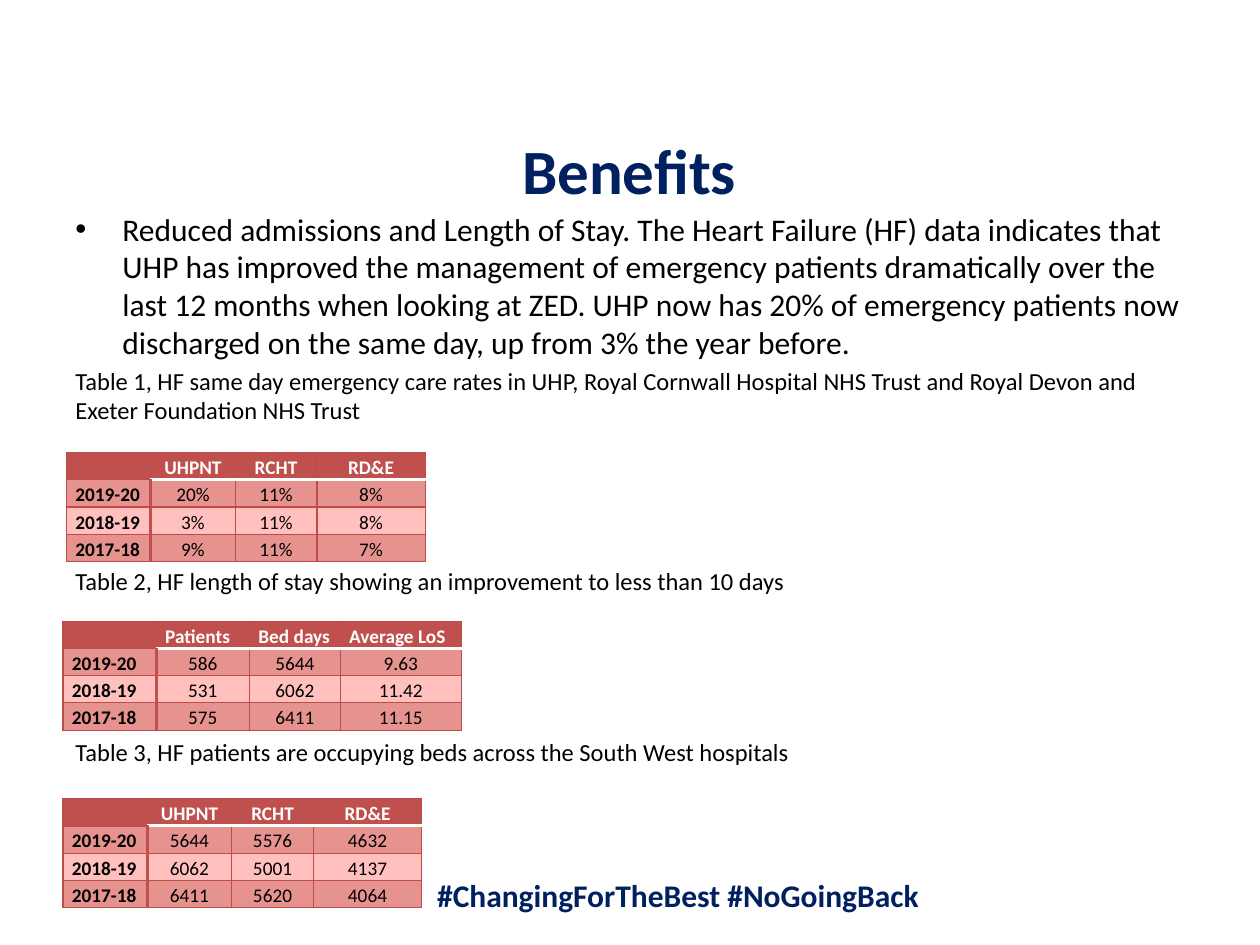
import pptx
import pptx.dml.color
import pptx.enum.text
import pptx.oxml.ns
import pptx.util
from dataclasses import dataclass
from lxml import etree
from pptx.util import Cm, Pt

Align = pptx.enum.text.PP_ALIGN
Anchor = pptx.enum.text.MSO_ANCHOR
qn = pptx.oxml.ns.qn


@dataclass(frozen=True)
class Theme:
    font: str = "Calibri"
    navy: str = "002060"
    black: str = "000000"
    white: str = "FFFFFF"
    red: str = "C0504D"
    grid: str = "BF4C48"
    dark_band: str = "E69390"
    light_band: str = "FFC0BE"
    title_size: float = 36
    body_size: float = 18
    caption_size: float = 14
    table_size: float = 11


theme = Theme()


def write(para, text, size, color, bold=False, **layout):
    for name, value in layout.items():
        setattr(para, name, value)
    span = para.add_run()
    span.text = text
    look = {"name": theme.font, "size": Pt(size), "bold": bold}
    for name, value in look.items():
        setattr(span.font, name, value)
    span.font.color.rgb = pptx.dml.color.RGBColor.from_string(color)


def add_border(cell, side, color, width):
    line = etree.SubElement(cell._tc.get_or_add_tcPr(), qn(f"a:ln{side}"), w=str(Pt(width)))
    fill = etree.SubElement(line, qn("a:solidFill"))
    etree.SubElement(fill, qn("a:srgbClr"), val=color)


deck = pptx.Presentation()
deck.slide_width, deck.slide_height = Cm(25.4), Cm(19.05)
page = deck.slides.add_slide(deck.slide_layouts[5])

title = page.shapes.title
title_format = {"left": Cm(1.27), "top": Cm(2.46), "width": Cm(22.83), "height": Cm(1.75)}
for name, value in title_format.items():
    setattr(title, name, value)
frame_format = {
    "vertical_anchor": Anchor.TOP,
    "margin_top": Cm(0.19),
    "margin_bottom": 0,
    "auto_size": pptx.enum.text.MSO_AUTO_SIZE.NONE,
}
for name, value in frame_format.items():
    setattr(title.text_frame, name, value)
write(title.text_frame.paragraphs[0], "Benefits", theme.title_size, theme.navy, True,
      alignment=Align.CENTER, space_before=Pt(0))

body = page.shapes.add_textbox(Cm(1.27), Cm(4.1), Cm(22.86), Cm(12)).text_frame
body.word_wrap = True
bullet = body.paragraphs[0]
properties = bullet._p.get_or_add_pPr()
properties.set("marL", str(Cm(0.95)))
properties.set("indent", str(Cm(-0.95)))
etree.SubElement(properties, qn("a:buFont"), typeface="Arial")
etree.SubElement(properties, qn("a:buChar"), char="•")
write(bullet, "Reduced admissions and Length of Stay. The Heart Failure (HF) data indicates that "
      "UHP has improved the management of emergency patients dramatically over the last 12 months "
      "when looking at ZED. UHP now has 20% of emergency patients now discharged on the same day, "
      "up from 3% the year before.", theme.body_size, theme.black)

captions = [
    ("Table 1, HF same day emergency care rates in UHP, Royal Cornwall Hospital NHS Trust "
     "and Royal Devon and Exeter Foundation NHS Trust", 2.8),
    ("Table 2, HF length of stay showing an improvement to less than 10 days", 81),
    ("Table 3, HF patients are occupying beds across the South West hospitals", 81),
]
for text, gap in captions:
    write(body.add_paragraph(), text, theme.caption_size, theme.black, space_before=Pt(gap))

hashtags = page.shapes.add_textbox(Cm(2.24), Cm(17.53), Cm(22.86), Cm(1.14)).text_frame
hashtags.word_wrap = True
write(hashtags.paragraphs[0], "#ChangingForTheBest #NoGoingBack", theme.body_size, theme.navy,
      True, alignment=Align.CENTER)

hospitals = ["UHPNT", "RCHT", "RD&E"]
years = ["2019-20", "2018-19", "2017-18"]
hospital_widths = [1.7, 1.7, 1.65, 2.18]
row_height = 0.55
tables = [
    (1.34, 9.12, hospital_widths, hospitals, Align.CENTER, Anchor.BOTTOM,
     [["20%", "11%", "8%"], ["3%", "11%", "8%"], ["9%", "11%", "7%"]]),
    (1.27, 12.52, [1.88, 1.88, 1.83, 2.44], ["Patients", "Bed days", "Average LoS"],
     Align.LEFT, Anchor.BOTTOM,
     [["586", "5644", "9.63"], ["531", "6062", "11.42"], ["575", "6411", "11.15"]]),
    (1.27, 16.1, hospital_widths, hospitals, Align.CENTER, Anchor.MIDDLE,
     [["5644", "5576", "4632"], ["6062", "5001", "4137"], ["6411", "5620", "4064"]]),
]
for left, top, widths, heads, head_align, value_anchor, values in tables:
    rows = [["", *heads]] + [[year, *line] for year, line in zip(years, values)]
    table = page.shapes.add_table(len(rows), len(widths), Cm(left), Cm(top),
                                  Cm(sum(widths)), Cm(row_height * len(rows))).table
    for column, width in zip(table.columns, widths):
        column.width = Cm(width)
    for r, texts in enumerate(rows):
        table.rows[r].height = Cm(row_height)
        for c, text in enumerate(texts):
            cell = table.cell(r, c)
            is_head, is_year = r == 0, c == 0
            borders = {side: (theme.grid, 0.75) for side in "LRTB"}
            if is_year and not is_head:
                borders["R"] = (theme.red, 2)
            if c == 1 and not is_head:
                borders["L"] = (theme.red, 2)
            if r < 2 and not is_year:
                borders["B" if is_head else "T"] = (theme.white, 2)
            for side, (color, width) in borders.items():
                add_border(cell, side, color, width)
            band = theme.red if is_head else theme.dark_band if r % 2 else theme.light_band
            cell.fill.solid()
            cell.fill.fore_color.rgb = pptx.dml.color.RGBColor.from_string(band)
            cell_format = {
                "margin_left": Cm(0.18), "margin_right": Cm(0.18),
                "margin_top": 0, "margin_bottom": 0,
                "vertical_anchor": Anchor.BOTTOM if is_head or is_year else value_anchor,
            }
            for name, value in cell_format.items():
                setattr(cell, name, value)
            para = cell.text_frame.paragraphs[0]
            if not text:
                para._p.get_or_add_endParaRPr().set("sz", str(theme.table_size * 100))
                continue
            align = head_align if is_head else Align.LEFT if is_year else Align.CENTER
            write(para, text, theme.table_size, theme.white if is_head else theme.black,
                  is_head or is_year, alignment=align, line_spacing=1.15, space_after=Pt(10))

deck.save("out.pptx")
